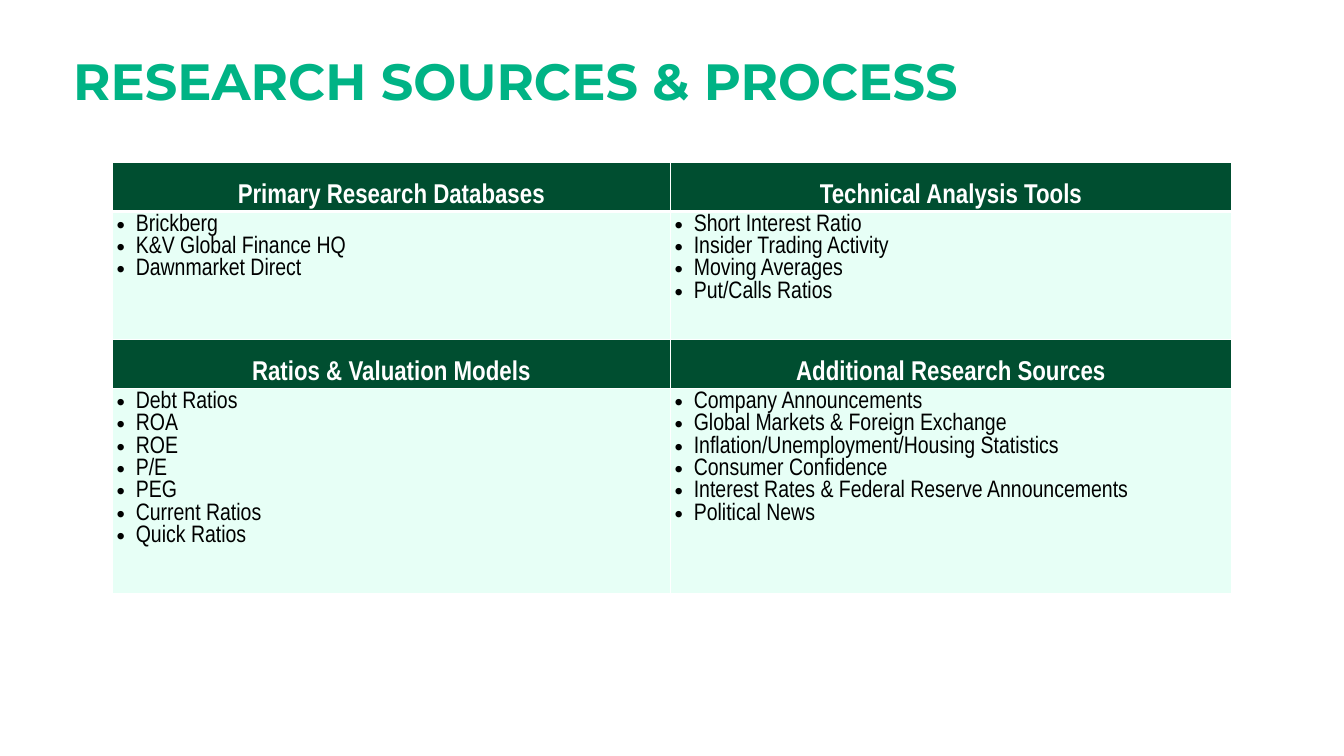
from lxml import etree
from pptx import Presentation
from pptx.dml.color import RGBColor
from pptx.enum.text import MSO_ANCHOR, PP_ALIGN
from pptx.oxml.ns import qn
from pptx.util import Pt

CENTER, LEFT = PP_ALIGN.CENTER, PP_ALIGN.LEFT
TOP, BOTTOM = MSO_ANCHOR.TOP, MSO_ANCHOR.BOTTOM
WHITE, BLACK, GREEN, DARK, PALE = "FFFFFF", "000000", "00B385", "004E30", "E7FFF6"

TITLE = "RESEARCH SOURCES & PROCESS"
SECTIONS = [
    [
        ("Primary Research Databases",
         ["Brickberg", "K&V Global Finance HQ", "Dawnmarket Direct"]),
        ("Technical Analysis Tools",
         ["Short Interest Ratio", "Insider Trading Activity", "Moving Averages",
          "Put/Calls Ratios"]),
    ],
    [
        ("Ratios & Valuation Models",
         ["Debt Ratios", "ROA", "ROE", "P/E", "PEG", "Current Ratios", "Quick Ratios"]),
        ("Additional Research Sources",
         ["Company Announcements", "Global Markets & Foreign Exchange",
          "Inflation/Unemployment/Housing Statistics", "Consumer Confidence",
          "Interest Rates & Federal Reserve Announcements", "Political News"]),
    ],
]
COLUMN_WIDTHS = [657.4, 661]
HEADER_HEIGHT = 58.3
LIST_HEIGHTS = [150.5, 226]
BULLET_INDENT = 22.5


def color(value):
    return RGBColor.from_string(value)


def style(paragraph, name, size, ink, bold):
    font = paragraph.font
    font.name, font.size, font.bold = name, Pt(size), bold
    font.color.rgb = color(ink)


def add_bullet(paragraph):
    properties = paragraph._p.get_or_add_pPr()
    properties.set("marL", str(Pt(BULLET_INDENT)))
    properties.set("indent", str(-Pt(BULLET_INDENT)))
    etree.SubElement(properties, qn("a:buFont")).set("typeface", "Arial")
    etree.SubElement(properties, qn("a:buChar")).set("char", "•")


def add_borders(cell, bottom_width):
    properties = cell._tc.get_or_add_tcPr()
    for side, width in (("L", 1), ("R", 1), ("T", 1), ("B", bottom_width)):
        line = etree.SubElement(properties, qn(f"a:ln{side}"), w=str(Pt(width)))
        fill = etree.SubElement(line, qn("a:solidFill"))
        etree.SubElement(fill, qn("a:srgbClr")).set("val", WHITE)


def fill_cell(cell, lines, is_header, bottom_width=1):
    add_borders(cell, bottom_width)
    cell.fill.solid()
    cell.fill.fore_color.rgb = color(DARK if is_header else PALE)
    cell.margin_left = cell.margin_right = Pt(5)
    cell.margin_top = cell.margin_bottom = Pt(3)
    cell.vertical_anchor = BOTTOM if is_header else TOP
    frame = cell.text_frame
    frame.text = "\n".join(lines)
    for paragraph in frame.paragraphs:
        paragraph.alignment = CENTER if is_header else LEFT
        if is_header:
            style(paragraph, "Arial Narrow", 32, WHITE, True)
        else:
            add_bullet(paragraph)
            style(paragraph, "Arial Narrow", 28, BLACK, False)


def add_title(page):
    frame = page.shapes.add_textbox(Pt(79.2), Pt(48.2), Pt(1424.9), Pt(85)).text_frame
    frame.word_wrap = True
    frame.vertical_anchor = BOTTOM
    paragraph = frame.paragraphs[0]
    paragraph.text = TITLE
    paragraph.line_spacing = 0.8
    style(paragraph, "Montserrat", 60, GREEN, True)


def add_sources(page):
    heights = [height for body in LIST_HEIGHTS for height in (HEADER_HEIGHT, body)]
    table = page.shapes.add_table(
        len(heights), len(COLUMN_WIDTHS), Pt(132.5), Pt(190.8),
        Pt(sum(COLUMN_WIDTHS)), Pt(sum(heights))).table
    for column, width in zip(table.columns, COLUMN_WIDTHS):
        column.width = Pt(width)
    for row, height in zip(table.rows, heights):
        row.height = Pt(height)
    for band, sections in enumerate(SECTIONS):
        for column, (heading, items) in enumerate(sections):
            fill_cell(table.cell(2 * band, column), [heading], True, 1 if band else 3)
            fill_cell(table.cell(2 * band + 1, column), items, False)


def main():
    deck = Presentation()
    deck.slide_width, deck.slide_height = Pt(1583.3), Pt(890.6)
    page = deck.slides.add_slide(deck.slide_layouts[6])
    add_title(page)
    add_sources(page)
    deck.save("out.pptx")


if __name__ == "__main__":
    main()
